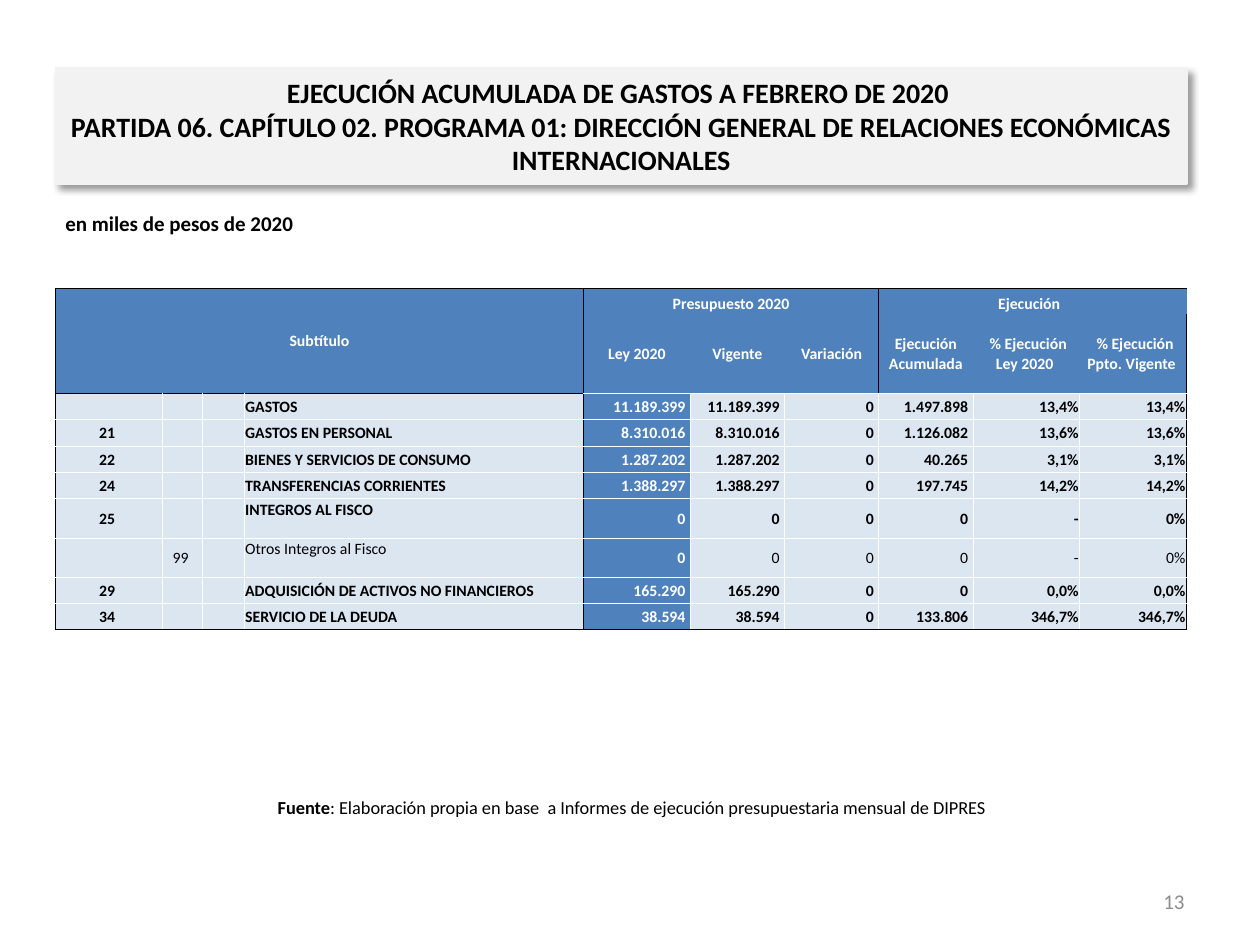
"""Build the budget execution slide: title, expenditure table, source and page number."""
from lxml import etree
from pptx import Presentation
from pptx.dml.color import RGBColor
from pptx.enum.shapes import MSO_SHAPE
from pptx.enum.text import MSO_ANCHOR as ANCHOR, PP_ALIGN as ALIGN
from pptx.oxml import parse_xml
from pptx.oxml.ns import nsdecls, qn
from pptx.util import Inches, Pt

BLACK = RGBColor(0x00, 0x00, 0x00)
WHITE = RGBColor(0xFF, 0xFF, 0xFF)
GREY = RGBColor(0x8C, 0x8C, 0x8C)
PALE = RGBColor(0xF2, 0xF2, 0xF2)
BLUE = RGBColor(0x4F, 0x81, 0xBD)
LIGHT_BLUE = RGBColor(0xDC, 0xE6, 0xF1)
FONT = "Calibri"

TITLE = ("EJECUCIÓN ACUMULADA DE GASTOS A FEBRERO DE 2020 \v"
         "PARTIDA 06. CAPÍTULO 02. PROGRAMA 01: DIRECCIÓN GENERAL DE "
         "RELACIONES ECONÓMICAS INTERNACIONALES")
UNITS = "en miles de pesos de 2020"
SOURCE = ["Fuente", ": Elaboración propia en base  a Informes de ejecución "
          "presupuestaria mensual de DIPRES"]
PAGE = "13"

GROUPS = [(0, 3, 1, "Subtítulo"), (4, 6, 0, "Presupuesto 2020"), (7, 9, 0, "Ejecución  ")]
HEADINGS = ["Ley 2020", "Vigente", "Variación", "Ejecución Acumulada",
            " % Ejecución Ley 2020 ", " % Ejecución Ppto. Vigente "]
ROWS = [
    ("", "", "GASTOS", "11.189.399", "11.189.399", "0", "1.497.898", "13,4%", "13,4%"),
    ("21", "", "GASTOS EN PERSONAL", "8.310.016", "8.310.016", "0", "1.126.082", "13,6%", "13,6%"),
    ("22", "", "BIENES Y SERVICIOS DE CONSUMO", "1.287.202", "1.287.202", "0", "40.265", "3,1%", "3,1%"),
    ("24", "", "TRANSFERENCIAS CORRIENTES", "1.388.297", "1.388.297", "0", "197.745", "14,2%", "14,2%"),
    ("25", "", "INTEGROS AL FISCO", "0", "0", "0", "0", "-", "0%"),
    ("", "99", "Otros Integros al Fisco", "0", "0", "0", "0", "-", "0%"),
    ("29", "", "ADQUISICIÓN DE ACTIVOS NO FINANCIEROS", "165.290", "165.290", "0", "0", "0,0%", "0,0%"),
    ("34", "", "SERVICIO DE LA DEUDA", "38.594", "38.594", "0", "133.806", "346,7%", "346,7%"),
]
COL_WEIGHTS = [0.85, 0.32, 0.33, 2.7, 0.85, 0.75, 0.75, 0.75, 0.85, 0.85]
TABLE_WIDTH = 8.98
ROW_HEIGHTS = [0.2, 0.63] + [0.31 if "Fisco" in row[2].title() else 0.21 for row in ROWS]
LAST_ROW, LAST_COL = len(ROW_HEIGHTS) - 1, len(COL_WEIGHTS) - 1


def style(p, size, color=BLACK, bold=False, align=ALIGN.LEFT):
    p.alignment = align
    for r in p.runs:
        r.font.name, r.font.size, r.font.bold = FONT, Pt(size), bold
        r.font.color.rgb = color


def add_text(s, box, text, anchor=ANCHOR.MIDDLE):
    tf = s.shapes.add_textbox(*map(Inches, box)).text_frame
    tf.word_wrap = True
    tf.vertical_anchor = anchor
    p = tf.paragraphs[0]
    p.text = text
    return p


def add_title(s):
    sp = s.shapes.add_shape(MSO_SHAPE.RECTANGLE, *map(Inches, (0.44, 0.54, 8.98, 0.92)))
    sp.shadow.inherit = False
    sp.fill.solid()
    sp.fill.fore_color.rgb = sp.line.color.rgb = PALE
    sp.line.width = Pt(0.75)
    effects = sp._element.spPr.find(qn("a:effectLst"))
    effects.append(parse_xml(
        f'<a:outerShdw {nsdecls("a")} blurRad="{Pt(4)}" dist="{Pt(3)}" dir="2700000" '
        'algn="tl" rotWithShape="0"><a:srgbClr val="000000"><a:alpha val="40000"/>'
        '</a:srgbClr></a:outerShdw>'))
    tf = sp.text_frame
    tf.word_wrap = True
    tf.vertical_anchor = ANCHOR.MIDDLE
    tf.margin_left = tf.margin_right = Inches(0.11)
    tf.margin_top = tf.margin_bottom = Inches(0.05)
    p = tf.paragraphs[0]
    p.text = TITLE
    style(p, 16, bold=True, align=ALIGN.CENTER)


def edge_colors(row, col):
    header = row < 2
    black = {
        "lnL": col in (0, 4) or (header and col == 7),
        "lnR": col in (3, LAST_COL) or (header and col == 6),
        "lnT": row == 0 or (row == 2 and col < 4),
        "lnB": row == LAST_ROW or (row == 1 and col < 4),
    }
    plain = {tag: None if header and not (tag == "lnB" and row == 1) else WHITE for tag in black}
    return {tag: BLACK if black[tag] else plain[tag] for tag in black}


def format_cell(cell, row, col):
    tcPr = cell._tc.get_or_add_tcPr()
    for tag, color in edge_colors(row, col).items():
        ln = etree.SubElement(tcPr, qn(f"a:{tag}"), w=str(Pt(0.5)))
        if color is None:
            etree.SubElement(ln, qn("a:noFill"))
        else:
            fill = etree.SubElement(ln, qn("a:solidFill"))
            etree.SubElement(fill, qn("a:srgbClr"), val=str(color))
    cell.fill.solid()
    cell.fill.fore_color.rgb = BLUE if row < 2 or col == 4 else LIGHT_BLUE
    cell.margin_left = cell.margin_right = cell.margin_top = Inches(0.01)
    cell.margin_bottom = 0
    cell.vertical_anchor = ANCHOR.MIDDLE
    p = cell.text_frame.paragraphs[0]
    if not p.runs:
        etree.SubElement(p._p, qn("a:endParaRPr"), sz="900")
    elif row < 2:
        style(p, 9, WHITE, True, ALIGN.CENTER)
        if row == 0 and col:
            cell.vertical_anchor = ANCHOR.BOTTOM
    else:
        align = ALIGN.CENTER if col < 3 else ALIGN.LEFT if col == 3 else ALIGN.RIGHT
        detail = bool(ROWS[row - 2][1])
        style(p, 9, WHITE if col == 4 else BLACK, col == 4 or not detail, align)
        if col == 3 and ROW_HEIGHTS[row] > 0.3:
            cell.vertical_anchor = ANCHOR.TOP


def add_budget_table(s):
    box = (0.44, 2.29, TABLE_WIDTH, sum(ROW_HEIGHTS))
    table = s.shapes.add_table(LAST_ROW + 1, LAST_COL + 1, *map(Inches, box)).table
    table.first_row = table.horz_banding = False
    for column, weight in zip(table.columns, COL_WEIGHTS):
        column.width = Inches(weight * TABLE_WIDTH / sum(COL_WEIGHTS))
    for row, height in zip(table.rows, ROW_HEIGHTS):
        row.height = Inches(height)
    for first, last, bottom, text in GROUPS:
        table.cell(0, first).merge(table.cell(bottom, last))
        table.cell(0, first).text = text
    for col, text in enumerate(HEADINGS, 4):
        table.cell(1, col).text = text
    for i, (code, item, name, *values) in enumerate(ROWS, 2):
        for col, text in enumerate([code, item, "", name, *values]):
            spaced = text and col != 3 and col < 8
            table.cell(i, col).text = f"{text} " if spaced else text
    for row in range(LAST_ROW + 1):
        for col in range(LAST_COL + 1):
            format_cell(table.cell(row, col), row, col)


def main():
    prs = Presentation()
    prs.slide_width, prs.slide_height = Inches(10), Inches(7.5)
    s = prs.slides.add_slide(prs.slide_layouts[6])
    p = add_text(s, (0.42, 6.29, 9.19, 0.24), SOURCE[0])
    p.add_run().text = SOURCE[1]
    style(p, 10.5, align=ALIGN.CENTER)
    p.runs[0].font.bold = True
    style(add_text(s, (7.17, 6.95, 2.33, 0.4), PAGE), 12, GREY, align=ALIGN.RIGHT)
    style(add_text(s, (0.42, 1.62, 9, 0.5), UNITS, ANCHOR.TOP), 12, bold=True)
    add_title(s)
    add_budget_table(s)
    prs.save("out.pptx")


if __name__ == "__main__":
    main()
